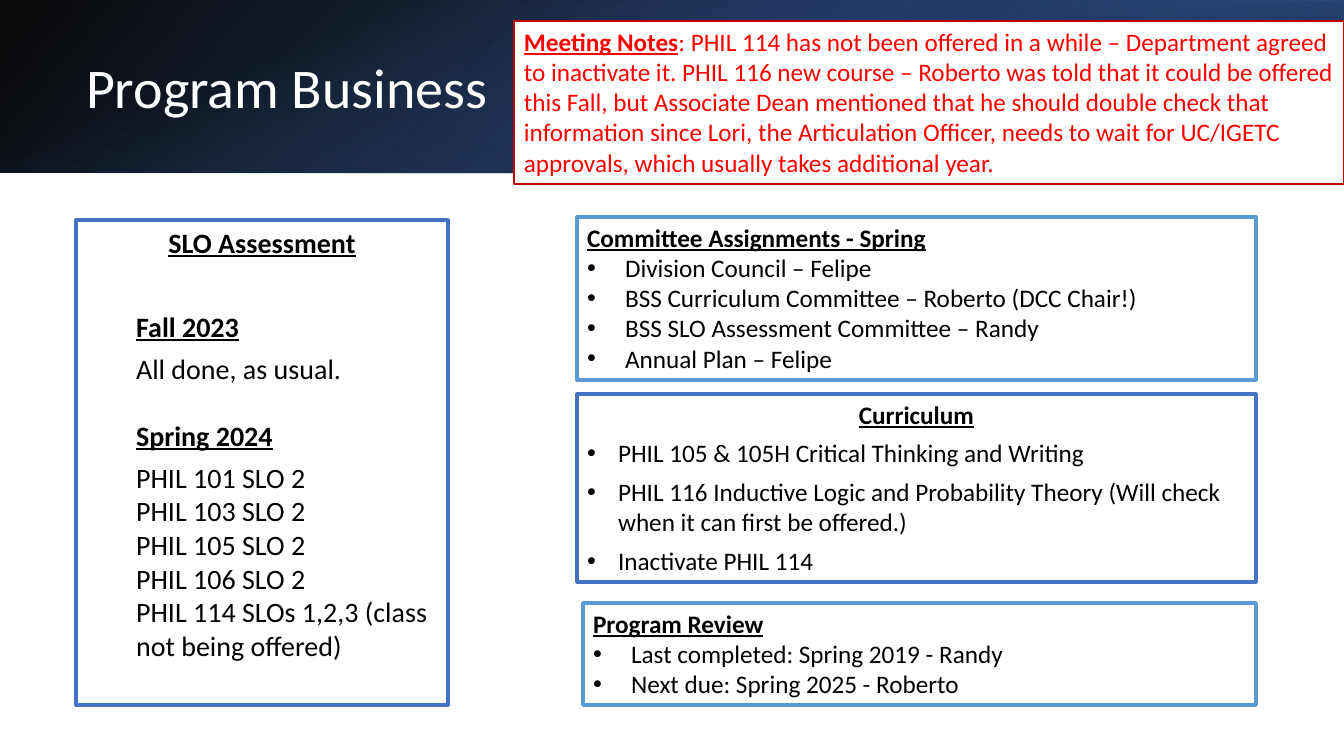
from lxml import etree
from pptx import Presentation, util as u
from pptx.dml.color import RGBColor
from pptx.enum import shapes, text
from pptx.oxml import ns

PX = 914400 / 100.8
FONT = "Calibri"
BLUE, SKY = "4472C4", "5B9BD5"
HEADING = dict(bold=True, underline=True)
PLAIN = dict(bold=False, underline=False)

BANDS = [
    dict(box=(0, 0, 1344, 173), flip=True, angle=140,
         stops=[(0, "000000", 96), (100, "2F5597", 100)]),
    dict(box=(896, 0, 448, 173), flip=True, rotation=180, angle=320,
         stops=[(19, "203864", 68), (100, BLUE, 79)]),
    dict(box=(585, -585, 173, 1344), rotation=90, angle=340,
         stops=[(23, BLUE, 0), (99, "000000", 74)]),
]

SLO = [
    ("SLO Assessment", dict(HEADING, center=True, after=36, indent=0)),
    ("Fall 2023", dict(HEADING, after=6)),
    ("All done, as usual.", dict(after=24)),
    ("Spring 2024", dict(HEADING, after=6)),
    ("PHIL 101 SLO 2", {}),
    ("PHIL 103 SLO 2", {}),
    ("PHIL 105 SLO 2", {}),
    ("PHIL 106 SLO 2", {}),
    ("PHIL 114 SLOs 1,2,3 (class not being offered)", {}),
]
CURRICULUM = [
    ("Curriculum", dict(HEADING, center=True, indent=0, bullet=False)),
    ("PHIL 105 & 105H Critical Thinking and Writing", {}),
    ("PHIL 116 Inductive Logic and Probability Theory "
     "(Will check when it can first be offered.)", {}),
    ("Inactivate PHIL 114", {}),
]
REVIEW = [
    ("Program Review", dict(HEADING, indent=0, bullet=False)),
    ("Last completed: Spring 2019 - Randy", {}),
    ("Next due: Spring 2025 - Roberto", {}),
]
COMMITTEES = [
    ("Committee Assignments - Spring", dict(HEADING, indent=0, bullet=False)),
    ("Division Council – Felipe", {}),
    ("BSS Curriculum Committee – Roberto (DCC Chair!)", {}),
    ("BSS SLO Assessment Committee – Randy", {}),
    ("Annual Plan – Felipe", {}),
]
NOTES = (
    ": PHIL 114 has not been offered in a while – Department agreed to "
    "inactivate it. PHIL 116 new course – Roberto was told that it could be "
    "offered this Fall, but Associate Dean mentioned that he should double "
    "check that information since Lori, the Articulation Officer, needs to "
    "wait for UC/IGETC approvals, which usually takes additional year.")


def px(n):
    return u.Emu(round(n * PX))


def rgb(color):
    return RGBColor.from_string(color)


def place(sp, box):
    for name, value in zip(("left", "top", "width", "height"), box):
        setattr(sp, name, px(value))


def outline(sp, color, width):
    sp.line.color.rgb = rgb(color)
    sp.line.width = u.Pt(width)


def setup_frame(sp, anchor=text.MSO_ANCHOR.TOP):
    tf = sp.text_frame
    fmt = dict(word_wrap=True, auto_size=text.MSO_AUTO_SIZE.NONE,
               vertical_anchor=anchor)
    for name, value in fmt.items():
        setattr(tf, name, value)
    return tf


def add_run(p, words, size, color="000000", **fmt):
    r = p.add_run()
    r.text = words
    r.font.color.rgb = rgb(color)
    for name, value in dict(fmt, name=FONT, size=u.Pt(size)).items():
        setattr(r.font, name, value)


def set_bullet(p, indent, bullet):
    pPr = p._p.get_or_add_pPr()
    pPr.set("marL", str(px(indent)))
    pPr.set("indent", str(px(-indent if bullet else 0)))
    if bullet:
        etree.SubElement(pPr, ns.qn("a:buFont"), typeface="Arial")
        etree.SubElement(pPr, ns.qn("a:buChar"), char="•")
    else:
        etree.SubElement(pPr, ns.qn("a:buNone"))


def add_gradient(sp, stops, angle):
    grad = etree.Element(ns.qn("a:gradFill"), rotWithShape="1")
    gs_list = etree.SubElement(grad, ns.qn("a:gsLst"))
    for pos, color, alpha in stops:
        gs = etree.SubElement(gs_list, ns.qn("a:gs"), pos=str(pos * 1000))
        clr = etree.SubElement(gs, ns.qn("a:srgbClr"), val=color)
        etree.SubElement(clr, ns.qn("a:alpha"), val=str(alpha * 1000))
    etree.SubElement(grad, ns.qn("a:lin"), ang=str(angle * 60000), scaled="0")
    sp.element.spPr.find(ns.qn("a:prstGeom")).addnext(grad)


def add_rect(s, box):
    sp = s.shapes.add_shape(shapes.MSO_SHAPE.RECTANGLE, *map(px, box))
    sp.shadow.inherit = False
    return sp


def add_band(s, box, stops, angle, rotation=0, flip=False):
    sp = add_rect(s, box)
    sp.line.fill.background()
    sp.rotation = rotation
    if flip:
        sp.element.spPr.find(ns.qn("a:xfrm")).set("flipH", "1")
    add_gradient(sp, stops, angle)
    s.shapes.title.element.addprevious(sp.element)


def fill_title(s, words):
    sp = s.shapes.title
    place(sp, (76, 42, 745, 97))
    p = setup_frame(sp, text.MSO_ANCHOR.MIDDLE).paragraphs[0]
    p.alignment = text.PP_ALIGN.LEFT
    p.line_spacing = 0.9
    add_run(p, words, 40, "FFFFFF")


def fill_list(sp, box, line, rows, size=18, **defaults):
    place(sp, box)
    outline(sp, *line)
    tf = setup_frame(sp)
    for i, (words, changes) in enumerate(rows):
        fmt = dict(PLAIN, center=False, after=0, bullet=True)
        fmt.update(defaults)
        fmt.update(changes)
        p = tf.add_paragraph() if i else tf.paragraphs[0]
        align = text.PP_ALIGN.CENTER if fmt["center"] else text.PP_ALIGN.LEFT
        spacing = dict(alignment=align, line_spacing=1.0,
                       space_before=u.Pt(0), space_after=u.Pt(fmt["after"]))
        for name, value in spacing.items():
            setattr(p, name, value)
        set_bullet(p, fmt["indent"], fmt["bullet"])
        add_run(p, words, size, bold=fmt["bold"], underline=fmt["underline"])


def add_notes_box(s):
    sp = add_rect(s, (514, 21, 830, 163))
    sp.fill.solid()
    sp.fill.fore_color.rgb = rgb("FFFFFF")
    outline(sp, "C00000", 1.25)
    p = setup_frame(sp).paragraphs[0]
    p.alignment = text.PP_ALIGN.LEFT
    add_run(p, "Meeting Notes", 18, "FF0000", **HEADING)
    add_run(p, NOTES, 18, "FF0000", **PLAIN)


def main():
    prs = Presentation()
    prs.slide_width, prs.slide_height = px(1344), px(756)
    s = prs.slides.add_slide(prs.slide_layouts.get_by_name("Comparison"))
    for band in BANDS:
        add_band(s, **band)
    fill_title(s, "Program Business")
    slo, curriculum, review, committees = list(s.placeholders)[1:5]
    fill_list(slo, (76, 220, 372, 485), (BLUE, 2.25), SLO, 20,
              indent=50, bullet=False)
    fill_list(curriculum, (577, 394, 679, 188), (BLUE, 2.25), CURRICULUM,
              indent=31, after=6)
    fill_list(review, (583, 603, 673, 102), (SKY, 2.5), REVIEW, indent=38)
    fill_list(committees, (577, 217, 679, 163), (SKY, 2.5), COMMITTEES,
              indent=38)
    add_notes_box(s)
    prs.save("out.pptx")


if __name__ == "__main__":
    main()
